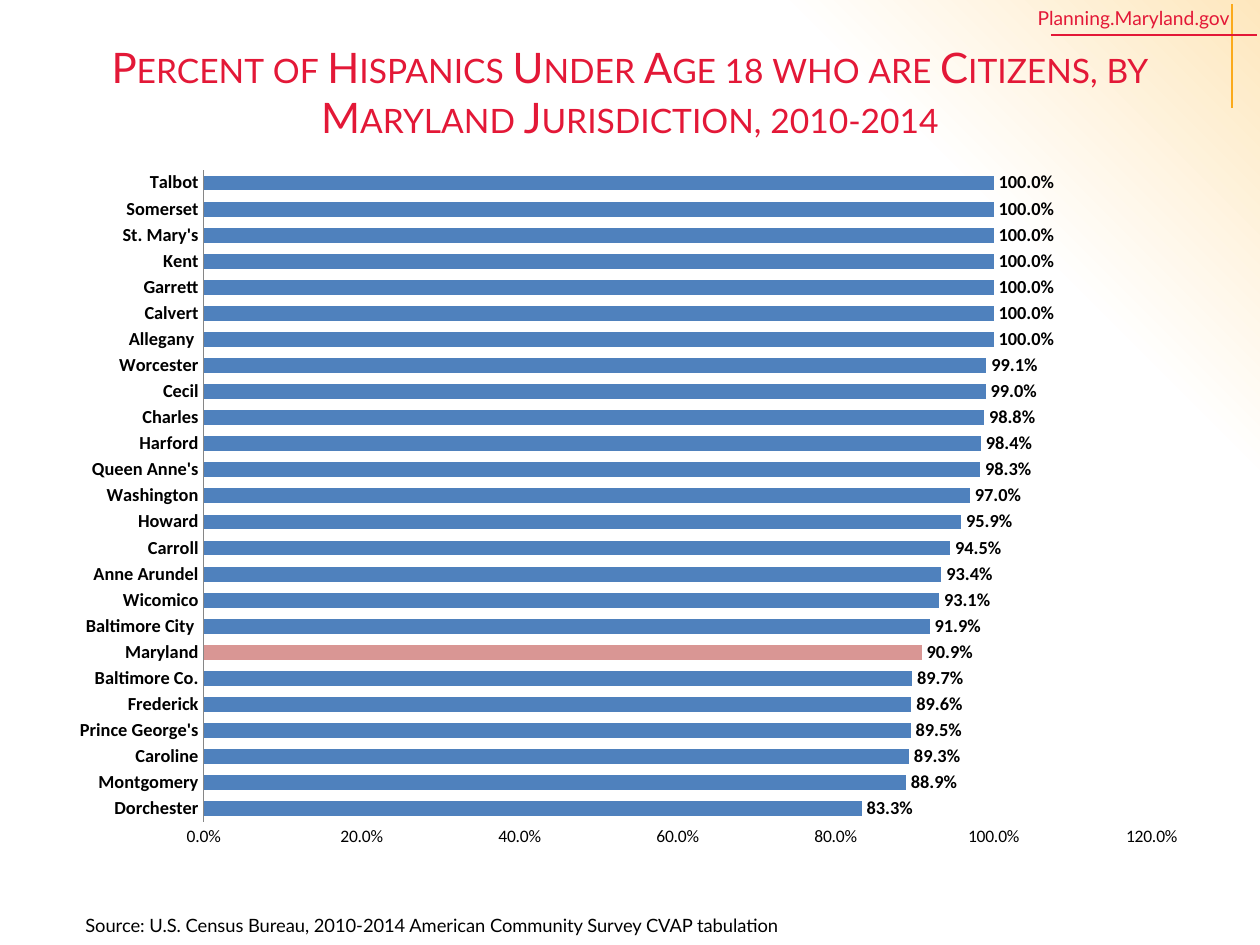
from lxml import etree
from pptx import Presentation
from pptx.chart.data import CategoryChartData
from pptx.dml.color import RGBColor
from pptx.enum.chart import XL_CHART_TYPE, XL_LABEL_POSITION, XL_TICK_MARK
from pptx.enum.shapes import MSO_CONNECTOR
from pptx.enum.text import MSO_ANCHOR, PP_ALIGN
from pptx.oxml import parse_xml
from pptx.oxml.ns import nsdecls, qn
from pptx.util import Emu, Pt

BAR = XL_CHART_TYPE.BAR_CLUSTERED
OUTSIDE = XL_LABEL_POSITION.OUTSIDE_END
NO_TICK = XL_TICK_MARK.NONE
STRAIGHT = MSO_CONNECTOR.STRAIGHT
MIDDLE = MSO_ANCHOR.MIDDLE
LEFT, CENTER, RIGHT = PP_ALIGN.LEFT, PP_ALIGN.CENTER, PP_ALIGN.RIGHT

RED, GOLD, BLACK = "E31837", "FBAA1B", "000000"
BLUE, PINK, GRAY = "4F81BD", "D99694", "868686"
PERCENT = "0.0%"

TITLE = ("Percent of Hispanics Under Age 18 who are Citizens, "
         "by Maryland Jurisdiction, 2010-2014")
SITE = "Planning.Maryland.gov"
SOURCE = "Source: U.S. Census Bureau, 2010-2014 American Community Survey CVAP tabulation"
HIGHLIGHT = "Maryland"
CITIZEN_SHARES = [  # bottom bar first
    ("Dorchester", 0.833), ("Montgomery", 0.889), ("Caroline", 0.893),
    ("Prince George's", 0.895), ("Frederick", 0.896), ("Baltimore Co.", 0.897),
    ("Maryland", 0.909), ("Baltimore City ", 0.919), ("Wicomico", 0.931),
    ("Anne Arundel", 0.934), ("Carroll", 0.945), ("Howard", 0.959),
    ("Washington", 0.97), ("Queen Anne's", 0.983), ("Harford", 0.984),
    ("Charles", 0.988), ("Cecil", 0.99), ("Worcester", 0.991),
    ("Allegany ", 1), ("Calvert", 1), ("Garrett", 1), ("Kent", 1),
    ("St. Mary's", 1), ("Somerset", 1), ("Talbot", 1),
]
CORNER_LINES = [((1232, 4, 1232, 108), GOLD), ((1051, 35, 1257, 35), RED)]
PLOT_AREA = {"x": 0.124, "y": 0.017, "w": 0.836, "h": 0.913}


def px(*lengths):
    return [Emu(round(length * 914400 / 126)) for length in lengths]


def rgb(color):
    return RGBColor.from_string(color)


def style_font(font, size, color, name, bold=False):
    font.size, font.name, font.bold = Pt(size), name, bold
    font.color.rgb = rgb(color)


def paint_background(slide):
    fill = slide.background.fill
    fill.gradient()
    fill.gradient_angle = 225
    for stop, color, position in zip(fill.gradient_stops, ("FEE7BE", "FFFFFF"), (0, 0.22)):
        stop.color.rgb = rgb(color)
        stop.position = position
    first_color = next(slide.background._cSld.iter(qn("a:srgbClr")))
    etree.SubElement(first_color, qn("a:alpha"), val="50000")


def add_line(slide, ends, color):
    line = slide.shapes.add_connector(STRAIGHT, *px(*ends))
    line.line.color.rgb = rgb(color)
    line.line.width = Pt(1)
    etree.SubElement(line._element.spPr, qn("a:effectLst"))


def write_text(box, text, size, color, align):
    para = box.text_frame.paragraphs[0]
    para.text = text
    para.alignment = align
    style_font(para.font, size, color, "Lato")
    return para


def add_text(slide, place, text, size, color, align):
    box = slide.shapes.add_textbox(*px(*place))
    box.text_frame.word_wrap = True
    write_text(box, text, size, color, align)
    return box


def set_plot_area(chart):
    """Fix the inner plot area as fractions of the chart."""
    plot_area = chart._chartSpace.chart.plotArea
    for old in plot_area.findall(qn("c:layout")):
        plot_area.remove(old)
    modes = "".join(f'<c:{key}Mode val="edge"/>' for key in "xy")
    sizes = "".join(f'<c:{key} val="{value}"/>' for key, value in PLOT_AREA.items())
    plot_area.insert(0, parse_xml(
        f'<c:layout {nsdecls("c")}><c:manualLayout><c:layoutTarget val="inner"/>'
        f'{modes}{sizes}</c:manualLayout></c:layout>'))


def add_share_chart(slide, place):
    names, shares = zip(*CITIZEN_SHARES)
    chart_data = CategoryChartData(number_format=PERCENT)
    chart_data.categories = names
    chart_data.add_series("Series 1", shares)
    chart = slide.shapes.add_chart(BAR, *px(*place), chart_data).chart
    chart.has_legend = chart.has_title = False
    style_font(chart.font, 10, BLACK, "Calibri")
    set_plot_area(chart)

    names_axis, share_axis = chart.category_axis, chart.value_axis
    for axis in (names_axis, share_axis):
        axis.major_tick_mark = axis.minor_tick_mark = NO_TICK
        axis.has_major_gridlines = False
    style_font(names_axis.tick_labels.font, 10.5, BLACK, "Calibri", True)
    names_axis.format.line.color.rgb = rgb(GRAY)
    share_axis.format.line.fill.background()
    share_axis.minimum_scale, share_axis.maximum_scale = 0, 1.2
    share_axis.major_unit = 0.2
    share_axis.tick_labels.number_format = PERCENT
    share_axis.tick_labels.number_format_is_linked = False

    plot = chart.plots[0]
    plot.gap_width, plot.overlap = 75, -25
    plot.vary_by_categories = False
    series = plot.series[0]
    bars = [(series, BLUE), (series.points[names.index(HIGHLIGHT)], PINK)]
    for bar, color in bars:
        bar.format.fill.solid()
        bar.format.fill.fore_color.rgb = rgb(color)
    labels = series.data_labels
    labels.show_value = True
    labels.position = OUTSIDE
    labels.number_format, labels.number_format_is_linked = PERCENT, False
    style_font(labels.font, 10.5, BLACK, "Calibri", True)


def main():
    deck = Presentation()
    deck.slide_width, deck.slide_height = px(1260, 945)
    slide = deck.slides.add_slide(deck.slide_layouts[5])
    paint_background(slide)
    for ends, color in CORNER_LINES:
        add_line(slide, ends, color)

    site = add_text(slide, (925, 6, 305, 24), SITE, 11, RED, RIGHT).text_frame
    site.margin_top = site.margin_right = site.margin_bottom = 0

    title = slide.shapes.title
    title.left, title.top, title.width, title.height = px(63, 21, 1134, 141)
    title.text_frame.vertical_anchor = MIDDLE
    title_para = write_text(title, TITLE, 24, RED, CENTER)
    title_para.runs[0]._r.get_or_add_rPr().set("cap", "small")

    add_share_chart(slide, (63, 158, 1134, 714))
    add_text(slide, (73, 908, 861, 35), SOURCE, 10.5, BLACK, LEFT)
    deck.save("out.pptx")


if __name__ == "__main__":
    main()
